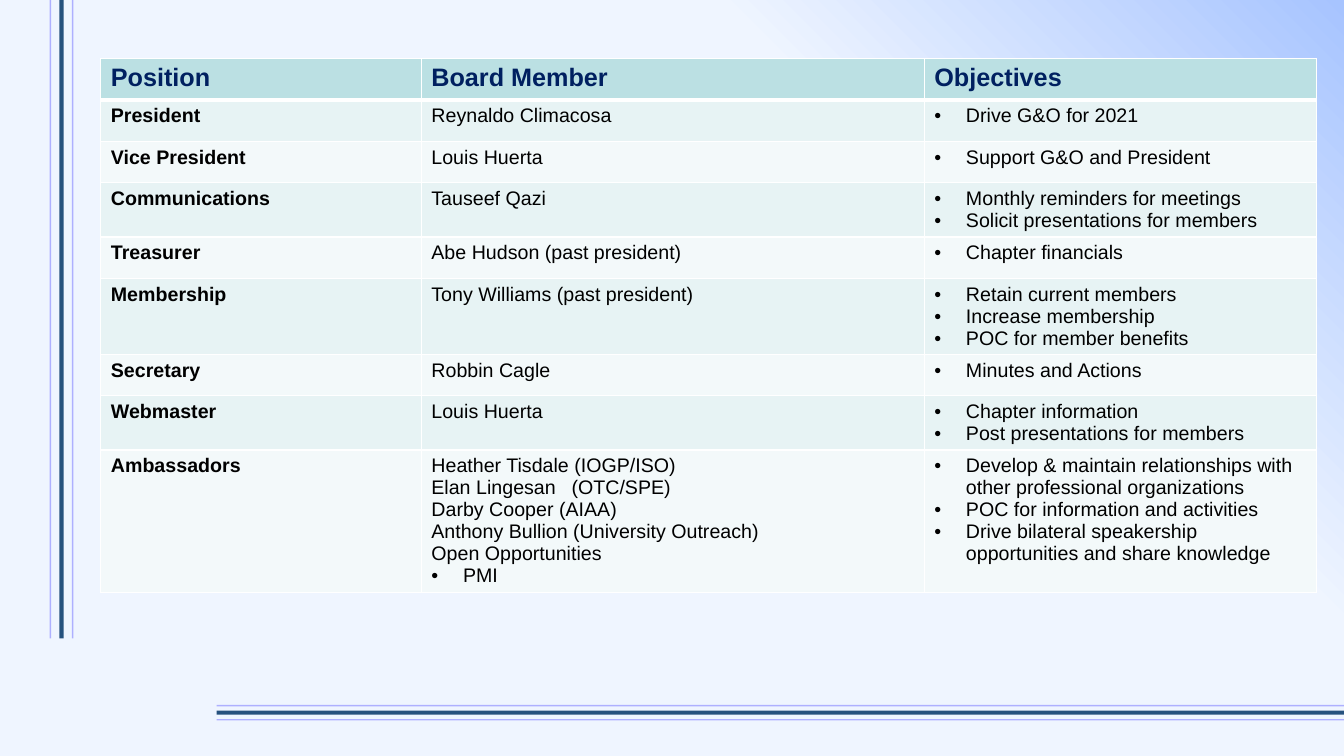
import lxml.etree
import pptx
import pptx.dml.color
import pptx.enum.shapes
import pptx.oxml
import pptx.oxml.ns
import pptx.util

RGBColor = pptx.dml.color.RGBColor
SKY = RGBColor(0xEF, 0xF5, 0xFF)
BLUE = RGBColor(0xA7, 0xC4, 0xFF)
LILAC = RGBColor(0x99, 0x99, 0xFF)
NAVY = RGBColor(0x00, 0x33, 0x66)
HEADING = RGBColor(0x00, 0x20, 0x60)
BLACK = RGBColor(0x00, 0x00, 0x00)
WHITE = RGBColor(0xFF, 0xFF, 0xFF)
HEADER_FILL = RGBColor(0xBB, 0xE0, 0xE3)
BAND_FILLS = (RGBColor(0xE7, 0xF3, 0xF4), RGBColor(0xF3, 0xF9, 0xFA))

GRID_COLUMNS = 80
GRID_ROWS = 45
BULLET = "• "
BULLET_INDENT = 1.88
TAB_STOP = 8.34

HEADINGS = ("Position", "Board Member", "Objectives")
BOARD = (
    ("President", ["Reynaldo Climacosa"], ["Drive G&O for 2021"]),
    ("Vice President", ["Louis Huerta"], ["Support G&O and President"]),
    ("Communications", ["Tauseef Qazi"],
     ["Monthly reminders for meetings", "Solicit presentations for members"]),
    ("Treasurer", ["Abe Hudson (past president)"], ["Chapter financials"]),
    ("Membership", ["Tony Williams (past president)"],
     ["Retain current members", "Increase membership", "POC for member benefits"]),
    ("Secretary", ["Robbin Cagle"], ["Minutes and Actions"]),
    ("Webmaster", ["Louis Huerta"],
     ["Chapter information", "Post presentations for members"]),
    ("Ambassadors",
     ["Heather Tisdale (IOGP/ISO)", "Elan Lingesan\t(OTC/SPE)", "Darby Cooper (AIAA)",
      "Anthony Bullion (University Outreach)", "Open Opportunities", BULLET + "PMI"],
     ["Develop & maintain relationships with other professional organizations",
      "POC for information and activities",
      "Drive bilateral speakership opportunities and share knowledge"]),
)


def add_element(parent, tag, **attributes):
    element = lxml.etree.SubElement(parent, pptx.oxml.ns.qn(tag))
    for name, value in attributes.items():
        element.set(name, str(value))
    return element


class BoardSlide:
    font_name = "Arial"

    def __init__(self, deck):
        self.slide = deck.slides.add_slide(deck.slide_layouts[6])
        self.column = deck.slide_width / GRID_COLUMNS
        self.row = deck.slide_height / GRID_ROWS

    def across(self, columns):
        return pptx.util.Emu(round(columns * self.column))

    def down(self, rows):
        return pptx.util.Emu(round(rows * self.row))

    def background(self):
        fill = self.slide.background.fill
        fill.gradient()
        fill.gradient_angle = 45
        for stop, position, color in zip(fill.gradient_stops, (0.7, 1), (SKY, BLUE)):
            stop.position = position
            stop.color.rgb = color

    def line(self, start, end, color, width, opacity):
        connector = self.slide.shapes.add_connector(
            pptx.enum.shapes.MSO_CONNECTOR.STRAIGHT,
            self.across(start[0]), self.down(start[1]),
            self.across(end[0]), self.down(end[1]))
        connector.line.color.rgb = color
        connector.line.width = pptx.util.Pt(width)
        properties = connector._element.spPr
        shade = properties.find(".//" + pptx.oxml.ns.qn("a:srgbClr"))
        add_element(shade, "a:alpha", val=opacity * 1000)
        add_element(properties, "a:effectLst")

    def table(self, left, top, widths, row_height, row_count):
        frame = self.slide.shapes.add_table(
            row_count, len(widths), self.across(left), self.down(top),
            self.across(sum(widths)), self.down(row_height * row_count))
        table = frame.table
        table.horz_banding = False
        for column, width in zip(table.columns, widths):
            column.width = self.across(width)
        for row in table.rows:
            row.height = self.down(row_height)
        return table

    def borders(self, cell, top, bottom):
        properties = cell._tc.get_or_add_tcPr()
        for side, width in (("L", 1), ("R", 1), ("T", top), ("B", bottom)):
            edge = add_element(properties, "a:ln" + side, w=pptx.util.Pt(width))
            fill = add_element(edge, "a:solidFill")
            add_element(fill, "a:srgbClr", val=WHITE)

    def bullet(self, para):
        properties = para._p.get_or_add_pPr()
        indent = self.across(BULLET_INDENT)
        properties.set("marL", str(indent))
        properties.set("indent", str(-indent))
        add_element(properties, "a:buFont", typeface=self.font_name)
        add_element(properties, "a:buChar", char=BULLET.strip())

    def tab(self, para):
        stops = add_element(para._p.get_or_add_pPr(), "a:tabLst")
        add_element(stops, "a:tab", pos=self.across(TAB_STOP), algn="l")

    def cell(self, cell, lines, fill, size, color, bold, top=1, bottom=1):
        self.borders(cell, top, bottom)
        cell.fill.solid()
        cell.fill.fore_color.rgb = fill
        cell.text_frame.text = "\n".join(line.removeprefix(BULLET) for line in lines)
        for para, line in zip(cell.text_frame.paragraphs, lines):
            if line.startswith(BULLET):
                self.bullet(para)
            if "\t" in line:
                self.tab(para)
            for span in para.runs:
                span.font.name = self.font_name
                span.font.size = pptx.util.Pt(size)
                span.font.bold = bold
                span.font.color.rgb = color


def main():
    deck = pptx.Presentation()
    deck.slide_width = pptx.util.Inches(13.33)
    deck.slide_height = pptx.util.Inches(7.5)
    page = BoardSlide(deck)
    page.background()

    thin, thick = (LILAC, 1, 75), (NAVY, 3, 84)
    for index, style in enumerate((thin, thick, thin)):
        x = 3 + 0.66 * index
        y = 42 + 0.42 * index
        page.line((x, 0), (x, 38), *style)
        page.line((GRID_COLUMNS, y), (12.9, y), *style)

    table = page.table(6, 3.5, (19.08, 29.94, 23.34), 2.46, len(BOARD) + 1)
    for column, heading in enumerate(HEADINGS):
        page.cell(table.cell(0, column), [heading], HEADER_FILL, 18, HEADING, True, bottom=3)
    for row, (position, members, objectives) in enumerate(BOARD, start=1):
        contents = ([position], members, [BULLET + goal for goal in objectives])
        for column, lines in enumerate(contents):
            page.cell(table.cell(row, column), lines, BAND_FILLS[(row - 1) % 2],
                      14, BLACK, column == 0, top=3 if row == 1 else 1)

    deck.save("out.pptx")


if __name__ == "__main__":
    main()
